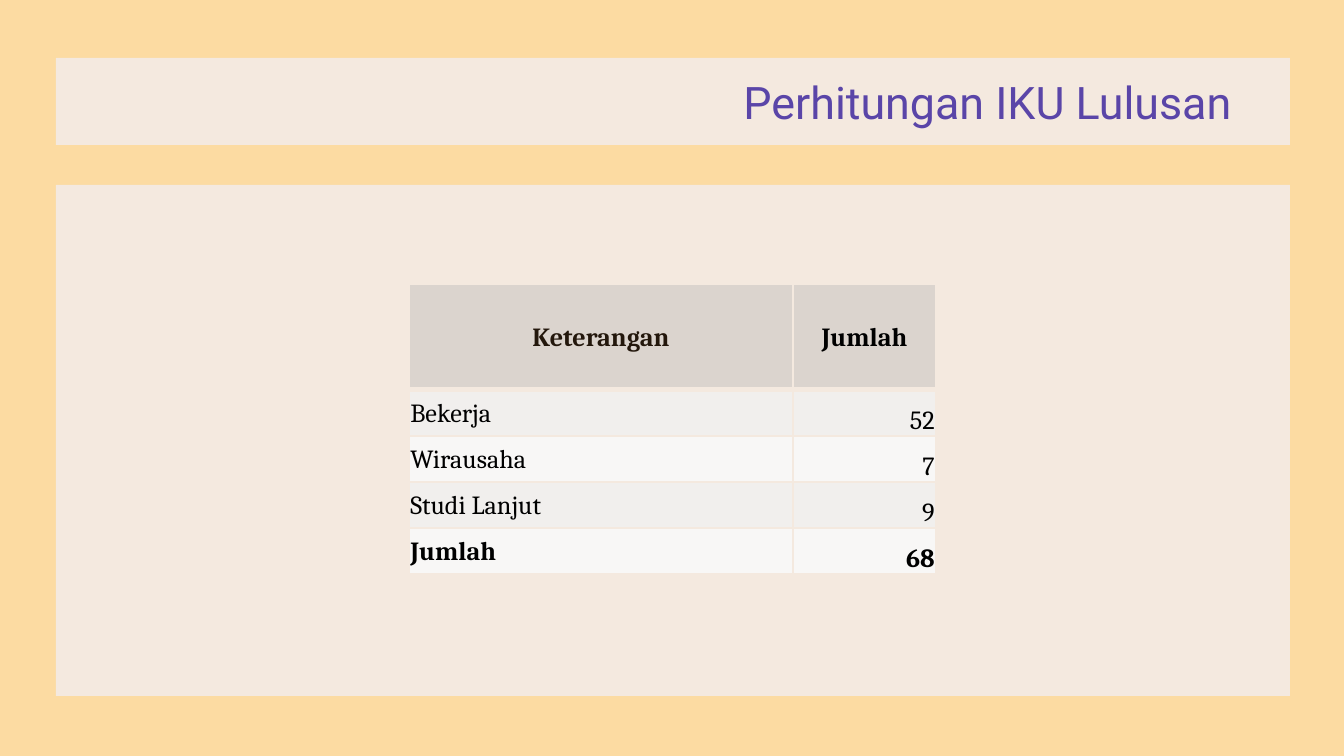
"""Build the graduate performance indicator slide with its summary table."""
from dataclasses import dataclass

from lxml import etree
from pptx import Presentation, util as u
from pptx.dml.color import RGBColor
from pptx.enum import shapes, text
from pptx.oxml.ns import qn

EMU_PER_PX = 914400 / 134.4


@dataclass(frozen=True)
class Theme:
    background: str = "FCDBA2"
    panel: str = "F4E9DF"
    title: str = "5A45A8"
    heading: str = "23170C"
    ink: str = "000000"
    header_fill: str = "DBD4CE"
    bands: tuple[str, str] = ("F1EFED", "F8F7F6")
    title_font: str = "Roboto"
    table_font: str = "Cambria"
    title_size: int = 24
    table_size: int = 14


@dataclass(frozen=True)
class Box:
    left: int
    top: int
    width: int
    height: int

    def emu(self) -> tuple[int, int, int, int]:
        return px(self.left), px(self.top), px(self.width), px(self.height)


@dataclass(frozen=True)
class Row:
    label: str
    value: str
    bold: bool = False


THEME = Theme()
PANELS = (Box(56, 58, 1234, 87), Box(56, 185, 1234, 511))
TITLE_BOX = Box(70, 58, 1175, 87)
COLUMN_WIDTHS = (384, 143)
HEADER_HEIGHT, ROW_HEIGHT = 106, 46
HEADER = Row("Keterangan", "Jumlah", True)
ROWS = (
    Row("Bekerja", "52"),
    Row("Wirausaha", "7"),
    Row("Studi Lanjut", "9"),
    Row("Jumlah", "68", True),
)


def px(length: int) -> int:
    return round(length * EMU_PER_PX)


def rgb(value: str) -> RGBColor:
    return RGBColor.from_string(value)


def write(frame, words: str, *, font: str, size: int, color: str,
          align: text.PP_ALIGN, bold: bool = False) -> None:
    para = frame.paragraphs[0]
    para.alignment = align
    span = para.add_run()
    span.text = words
    span.font.name = font
    span.font.size = u.Pt(size)
    span.font.bold = bold
    span.font.color.rgb = rgb(color)


def draw_panel(page, box: Box) -> None:
    panel = page.shapes.add_shape(shapes.MSO_SHAPE.RECTANGLE, *box.emu())
    panel.shadow.inherit = False
    panel.fill.solid()
    panel.fill.fore_color.rgb = rgb(THEME.panel)
    panel.line.fill.background()


def draw_title(page, words: str) -> None:
    title = page.shapes.title
    title.left, title.top, title.width, title.height = TITLE_BOX.emu()
    frame = title.text_frame
    frame.auto_size = text.MSO_AUTO_SIZE.NONE
    frame.vertical_anchor = text.MSO_ANCHOR.MIDDLE
    frame.margin_left = frame.margin_right = u.Inches(0.1)
    frame.margin_top = frame.margin_bottom = u.Inches(0.1)
    write(frame, words, font=THEME.title_font, size=THEME.title_size,
          color=THEME.title, align=text.PP_ALIGN.RIGHT)
    page.shapes.element.append(title.element)


def set_borders(cell, bottom: int) -> None:
    properties = cell._tc.get_or_add_tcPr()
    for side, points in (("L", 1), ("R", 1), ("T", 1), ("B", bottom)):
        line = etree.SubElement(properties, qn(f"a:ln{side}"), w=str(u.Pt(points)))
        fill = etree.SubElement(line, qn("a:solidFill"))
        etree.SubElement(fill, qn("a:srgbClr"), val=THEME.panel)


def draw_cell(cell, words: str, *, fill: str, color: str, bold: bool,
              align: text.PP_ALIGN, anchor: text.MSO_ANCHOR, border: int = 1) -> None:
    set_borders(cell, border)
    cell.fill.solid()
    cell.fill.fore_color.rgb = rgb(fill)
    cell.margin_left = cell.margin_right = cell.margin_top = u.Inches(0.01)
    cell.margin_bottom = 0
    cell.vertical_anchor = anchor
    write(cell.text_frame, words, font=THEME.table_font, size=THEME.table_size,
          color=color, align=align, bold=bold)


def draw_table(page) -> None:
    box = Box(409, 284, sum(COLUMN_WIDTHS), HEADER_HEIGHT + ROW_HEIGHT * len(ROWS))
    table = page.shapes.add_table(len(ROWS) + 1, len(COLUMN_WIDTHS), *box.emu()).table
    for column, width in zip(table.columns, COLUMN_WIDTHS):
        column.width = px(width)
    for index, row in enumerate(table.rows):
        row.height = px(ROW_HEIGHT if index else HEADER_HEIGHT)

    middle, bottom = text.MSO_ANCHOR.MIDDLE, text.MSO_ANCHOR.BOTTOM
    header = ((HEADER.label, THEME.heading), (HEADER.value, THEME.ink))
    for column, (words, color) in enumerate(header):
        draw_cell(table.cell(0, column), words, fill=THEME.header_fill, color=color,
                  bold=HEADER.bold, align=text.PP_ALIGN.CENTER, anchor=middle, border=3)
    for index, row in enumerate(ROWS):
        cells = ((row.label, text.PP_ALIGN.LEFT, middle),
                 (row.value, text.PP_ALIGN.RIGHT, bottom))
        for column, (words, align, anchor) in enumerate(cells):
            draw_cell(table.cell(index + 1, column), words, fill=THEME.bands[index % 2],
                      color=THEME.ink, bold=row.bold, align=align, anchor=anchor)


def main() -> None:
    deck = Presentation()
    deck.slide_width, deck.slide_height = px(1344), px(756)
    page = deck.slides.add_slide(deck.slide_layouts.get_by_name("Title Only"))
    page.background.fill.solid()
    page.background.fill.fore_color.rgb = rgb(THEME.background)
    for panel in PANELS:
        draw_panel(page, panel)
    draw_title(page, "Perhitungan IKU Lulusan")
    draw_table(page)
    deck.save("out.pptx")


if __name__ == "__main__":
    main()
